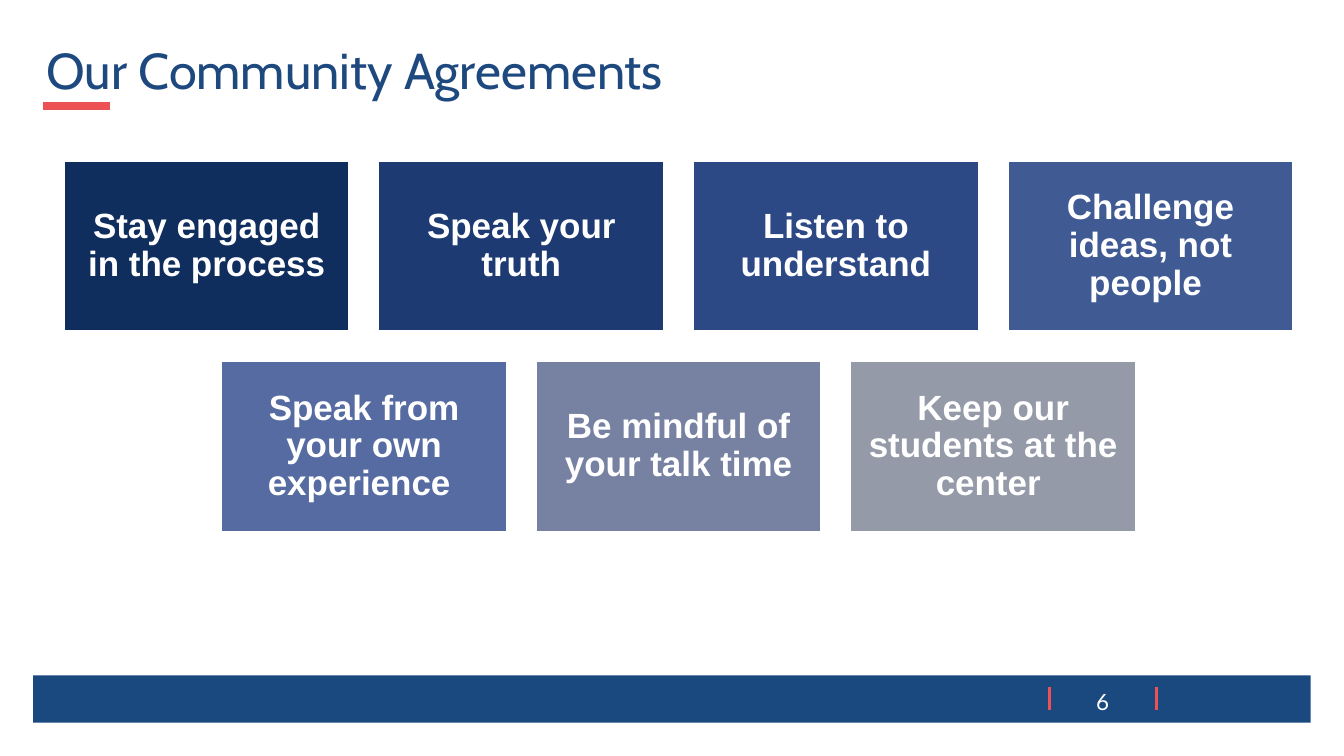
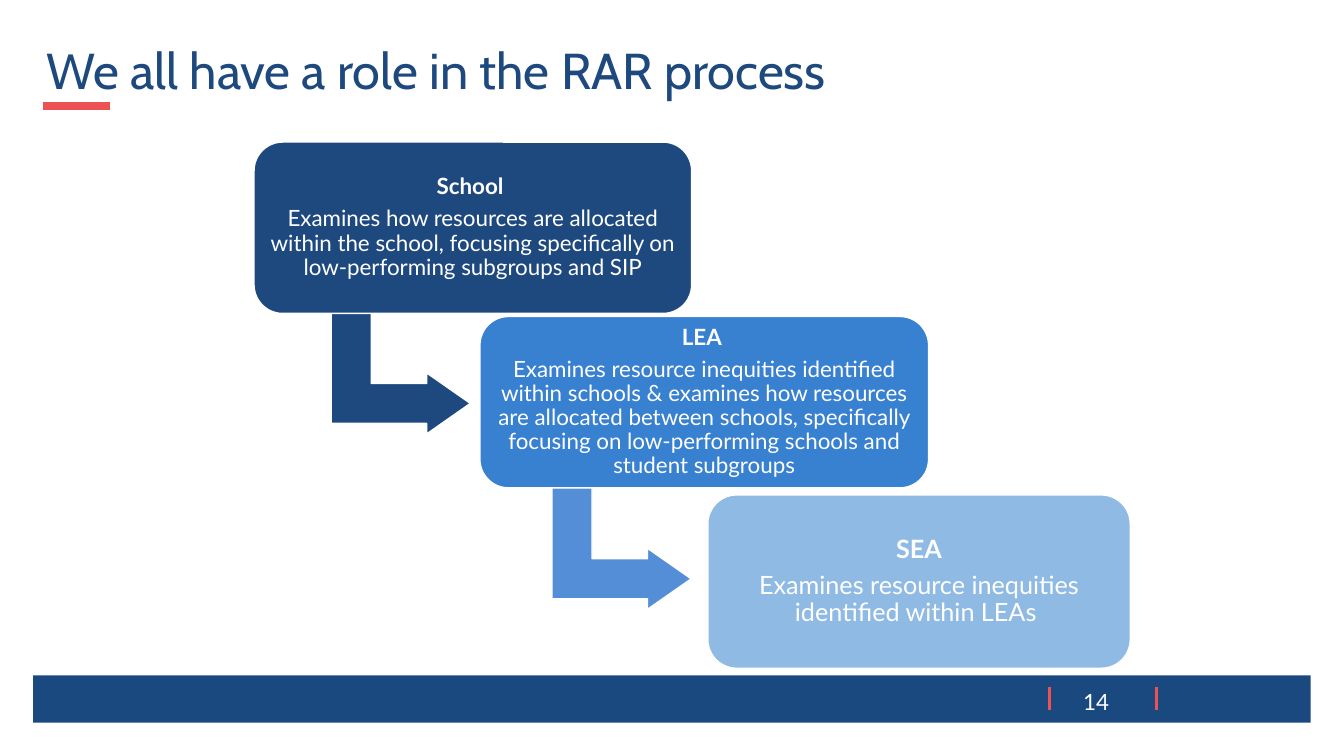
from lxml.etree import SubElement
from pptx import Presentation
from pptx.dml.color import RGBColor
from pptx.enum.shapes import MSO_CONNECTOR, MSO_SHAPE
from pptx.enum.text import MSO_ANCHOR, PP_ALIGN
from pptx.oxml.ns import qn
from pptx.util import Inches, Pt

NAVY, BAND, RED, WHITE = "1E497F", "1A497F", "EC5153", "FFFFFF"
TITLE_FONT, BODY_FONT, CARD_FONT = "Cabin", "Lato", "Arial"
FRAME_INSETS = (0.13, 0.07)

# Red rules on every slide: start x, start y, end x, end y, width in points
RULES = [
    (0.43, 1.05, 1.09, 1.05, 6),
    (11.47, 6.82, 11.47, 7.04, 2.25),
    (10.41, 6.82, 10.41, 7.04, 2.25),
]

AGREEMENTS_TITLE = "Our Community Agreements"
AGREEMENT_ROWS = [
    [
        ("Stay engaged in the process", "0F2D5D"),
        ("Speak your truth", "1D3B72"),
        ("Listen to understand", "2C4986"),
        ("Challenge ideas, not people ", "405A94"),
    ],
    [
        ("Speak from your own experience ", "566BA1"),
        ("Be mindful of your talk time", "7782A3"),
        ("Keep our students at the center ", "959AA8"),
    ],
]
CARD_WIDTH, CARD_HEIGHT, CARD_GAP = 2.84, 1.7, 0.28
CARDS_CENTER, CARDS_TOP, ROW_STEP = 6.73, 1.59, 1.99

ROLES_TITLE = "We all have a role in the RAR process"
ROLES = [
    dict(name="School ", size=16, color=NAVY, at=(2.52, 1.41, 4.34, 1.7),
         duty="Examines how resources are allocated within the school, "
              "focusing specifically on low-performing subgroups and SIP",
         arrow=(3.37, 3.01, NAVY)),
    dict(name="LEA ", size=16, color="3880D0", at=(4.76, 3.14, 4.45, 1.7),
         duty="Examines resource inequities identified within schools & "
              "examines how resources are allocated between schools, "
              "specifically focusing on low-performing schools and "
              "student subgroups",
         arrow=(5.56, 4.75, "548ED7")),
    dict(name="SEA", size=18, color="8FBAE4", at=(7.02, 4.91, 4.19, 1.72),
         duty="Examines resource inequities identified within LEAs ",
         arrow=None),
]
ARROW_WIDTH, ARROW_HEIGHT = 1.21, 1.38
ARROW_ADJUSTMENTS = (0.328, 0.25, 0.358)


def rgb(value):
    return RGBColor.from_string(value)


def add_box(page, preset, at, fill, line=None, line_width=1):
    box = page.shapes.add_shape(preset, *map(Inches, at))
    box.shadow.inherit = False
    box.fill.solid()
    box.fill.fore_color.rgb = rgb(fill)
    if line:
        box.line.color.rgb = rgb(line)
        box.line.width = Pt(line_width)
    else:
        box.line.fill.background()
    return box


def write(box, lines, font, size, color=WHITE, align=PP_ALIGN.CENTER,
          insets=(0.11, 0.11), spacing=0.9, after=0):
    """Fill a box with middle-anchored paragraphs from (text, bold) pairs."""
    frame = box.text_frame
    frame.word_wrap = True
    frame.vertical_anchor = MSO_ANCHOR.MIDDLE
    frame.margin_left = frame.margin_right = Inches(insets[0])
    frame.margin_top = frame.margin_bottom = Inches(insets[1])
    frame.text = "\n".join(text for text, bold in lines)
    for para, (text, bold) in zip(frame.paragraphs, lines):
        para.alignment = align
        para.line_spacing = spacing
        para.space_after = Pt(after)
        for span in para.runs:
            span.font.name = font
            span.font.size = Pt(size)
            span.font.bold = bold
            span.font.color.rgb = rgb(color)


def add_rule(page, x1, y1, x2, y2, width):
    rule = page.shapes.add_connector(
        MSO_CONNECTOR.STRAIGHT, *map(Inches, (x1, y1, x2, y2)))
    rule.line.color.rgb = rgb(RED)
    rule.line.width = Pt(width)
    SubElement(rule._element.spPr, qn("a:effectLst"))


def add_page(deck, title, number):
    page = deck.slides.add_slide(deck.slide_layouts[6])
    add_box(page, MSO_SHAPE.RECTANGLE, (0.33, 6.7, 12.67, 0.47), BAND)
    for rule in RULES:
        add_rule(page, *rule)
    title_box = page.shapes.add_textbox(*map(Inches, (0.33, 0, 11.5, 1.45)))
    write(title_box, [(title, False)], TITLE_FONT, 36, NAVY,
          PP_ALIGN.LEFT, FRAME_INSETS)
    number_box = page.shapes.add_textbox(
        *map(Inches, (9.42, 6.76, 1.71, 0.4)))
    write(number_box, [(str(number), False)], BODY_FONT, 16,
          align=PP_ALIGN.RIGHT, insets=FRAME_INSETS, spacing=1.0)
    return page


def add_agreements(page):
    step = CARD_WIDTH + CARD_GAP
    for row, cards in enumerate(AGREEMENT_ROWS):
        left = CARDS_CENTER - (len(cards) * step - CARD_GAP) / 2
        top = CARDS_TOP + row * ROW_STEP
        for column, (text, color) in enumerate(cards):
            at = (left + column * step, top, CARD_WIDTH, CARD_HEIGHT)
            card = add_box(page, MSO_SHAPE.RECTANGLE, at, color, WHITE, 2)
            write(card, [(text, True)], CARD_FONT, 25)


def add_arrow(page, left, top, color):
    arrow = add_box(page, MSO_SHAPE.BENT_UP_ARROW,
                    (left, top, ARROW_WIDTH, ARROW_HEIGHT), color, WHITE)
    arrow.rotation = 90
    for index, value in enumerate(ARROW_ADJUSTMENTS):
        arrow.adjustments[index] = value


def add_roles(page):
    for role in ROLES:
        if role["arrow"]:
            add_arrow(page, *role["arrow"])
        box = add_box(page, MSO_SHAPE.ROUNDED_RECTANGLE, role["at"],
                      role["color"], WHITE)
        write(box, [(role["name"], True), (role["duty"], False)],
              BODY_FONT, role["size"], insets=(0.07, 0.07),
              after=0.35 * role["size"])


def main():
    deck = Presentation()
    deck.slide_width, deck.slide_height = Inches(13.33), Inches(7.5)
    add_agreements(add_page(deck, AGREEMENTS_TITLE, 6))
    add_roles(add_page(deck, ROLES_TITLE, 14))
    deck.save("out.pptx")


if __name__ == "__main__":
    main()
